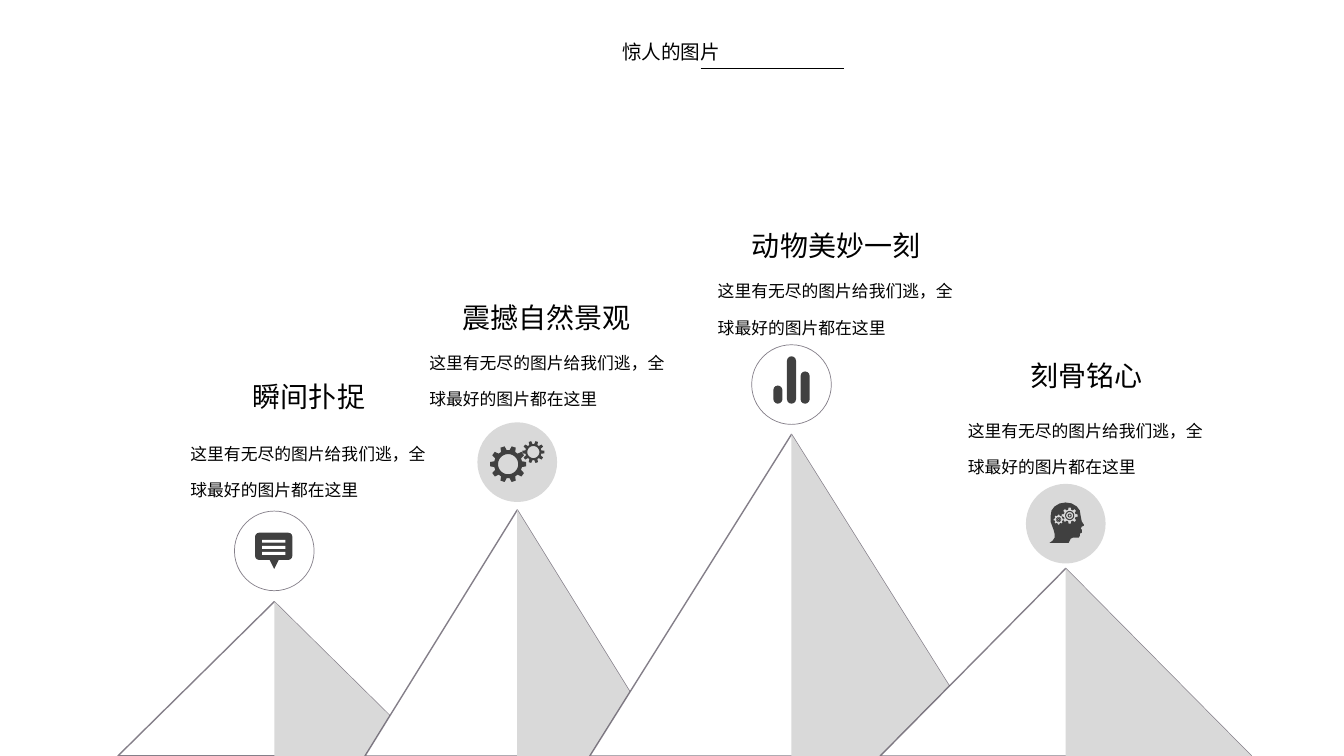
from collections import namedtuple
from math import cos, pi, sin

from lxml.etree import SubElement
from pptx import Presentation
from pptx.dml.color import RGBColor
from pptx.enum.shapes import MSO_CONNECTOR, MSO_SHAPE as Preset
from pptx.enum.text import MSO_ANCHOR, MSO_AUTO_SIZE, PP_ALIGN
from pptx.oxml.ns import qn
from pptx.util import Inches, Pt

WIDTH, HEIGHT = 13.33, 7.5
FONT = "Noto Sans"
COLORS = {"ink": "000000", "icon": "404040", "shade": "D9D9D9",
          "paper": "FFFFFF", "edge": "2F2637"}
EDGE_OPACITY = 59
DISC = 0.79
BODY = "这里有无尽的图片给我们逃，全球最好的图片都在这里"
BODY_SIZE = (2.55, 0.83)
HEADING_HEIGHT = 0.44

Mountain = namedtuple(
    "Mountain", "peak top half disc_top disc_fill icon heading heading_box body_at")


def color(name):
    return RGBColor.from_string(COLORS[name])


def paint(shape, fill, edge_width=None):
    shape.shadow.inherit = False
    shape.fill.solid()
    shape.fill.fore_color.rgb = color(fill)
    if edge_width is None:
        shape.line.fill.background()
        return
    shape.line.width = Pt(edge_width)
    shape.line.color.rgb = color("edge")
    edge_color = shape.line.fill._xPr.find(".//" + qn("a:srgbClr"))
    SubElement(edge_color, qn("a:alpha"), val=str(EDGE_OPACITY * 1000))


def add_preset(slide, preset, box, fill, edge_width=None, rounding=None):
    shape = slide.shapes.add_shape(preset, *map(Inches, box))
    if rounding is not None:
        shape.adjustments[0] = rounding
    paint(shape, fill, edge_width)


def add_outline(slide, contours, fill, edge_width=None):
    """Closed polygons in one shape; a nested polygon cuts a hole."""
    outlines = [[(Inches(x), Inches(y)) for x, y in points] for points in contours]
    builder = slide.shapes.build_freeform(*outlines[0][0])
    for points in outlines:
        if points is not outlines[0]:
            builder.move_to(*points[0])
        builder.add_line_segments(points[1:], close=True)
    paint(builder.convert_to_shape(), fill, edge_width)


def polar(x, y, radius, angle):
    return x + radius * cos(angle), y + radius * sin(angle)


def circle(x, y, radius, steps=40):
    return [polar(x, y, radius, 2 * pi * step / steps) for step in range(steps)]


def gear(x, y, tip, root, teeth):
    pitch = 2 * pi / teeth
    profile = [(root, -0.33), (tip, -0.19), (tip, 0.19), (root, 0.33)]
    return [polar(x, y, radius, (tooth + share) * pitch)
            for tooth in range(teeth) for radius, share in profile]


def bubble_icon(slide, x, y):
    add_outline(slide, [[(x - 0.05, y + 0.08), (x + 0.05, y + 0.08), (x, y + 0.18)]], "icon")
    add_preset(slide, Preset.ROUNDED_RECTANGLE, (x - 0.19, y - 0.18, 0.37, 0.27),
               "icon", rounding=0.15)
    for row in range(3):
        add_preset(slide, Preset.RECTANGLE, (x - 0.12, y - 0.11 + row * 0.06, 0.23, 0.03),
                   "paper")


def gears_icon(slide, x, y):
    for dx, dy, tip, root, hole in [(-0.09, 0.02, 0.18, 0.14, 0.1),
                                    (0.16, -0.1, 0.11, 0.08, 0.06)]:
        center = x + dx, y + dy
        add_outline(slide, [gear(*center, tip, root, 10), circle(*center, hole)], "icon")


def bars_icon(slide, x, y):
    for column, height in enumerate([0.18, 0.47, 0.32]):
        left = x - 0.18 + column * 0.135
        add_preset(slide, Preset.ROUNDED_RECTANGLE, (left, y + 0.19 - height, 0.09, height),
                   "icon", rounding=0.5)


def head_icon(slide, x, y):
    profile = [(0.16, -0.02), (0.15, -0.07), (0.14, -0.13), (0.11, -0.17), (0.06, -0.2),
               (0, -0.21), (-0.06, -0.2), (-0.11, -0.17), (-0.14, -0.13), (-0.15, -0.07),
               (-0.15, -0.02), (-0.12, 0.06), (-0.11, 0.1), (-0.11, 0.14), (-0.13, 0.17),
               (-0.16, 0.19), (0.03, 0.19), (0.05, 0.15), (0.07, 0.14), (0.13, 0.14),
               (0.14, 0.12), (0.14, 0.1), (0.16, 0.09), (0.16, 0.06), (0.15, 0.05),
               (0.16, 0.03), (0.18, 0.02), (0.18, 0.01)]
    contours = [[(x + dx, y + dy) for dx, dy in profile]]
    for dx, dy, tip, root, rings in [(-0.07, -0.04, 0.05, 0.04, (0.025, 0.02, 0.015, 0.005)),
                                     (0.04, -0.08, 0.08, 0.06, (0.045, 0.035, 0.02, 0.01))]:
        center = x + dx, y + dy
        contours.append(gear(*center, tip, root, 8))
        contours += [circle(*center, radius) for radius in rings]
    add_outline(slide, contours, "icon")


def set_text(shape, text, size, wrap, line_spacing=None):
    frame = shape.text_frame
    frame.text = text
    paragraph = frame.paragraphs[0]
    run = paragraph.runs[0]
    formats = [(frame, {"word_wrap": wrap, "auto_size": MSO_AUTO_SIZE.NONE,
                        "vertical_anchor": MSO_ANCHOR.TOP}),
               (paragraph, {"alignment": PP_ALIGN.LEFT, "line_spacing": line_spacing}),
               (run.font, {"size": Pt(size), "name": FONT})]
    for target, values in formats:
        for name, value in values.items():
            setattr(target, name, value)
    run.font.color.rgb = color("ink")
    SubElement(run.font._element, qn("a:ea"), typeface=FONT)


def add_title(slide, left, top, width, height):
    title = slide.shapes.title
    for name, value in zip(("left", "top", "width", "height"), (left, top, width, height)):
        setattr(title, name, Inches(value))
    set_text(title, "惊人的图片", 14, wrap=False)
    start, level = left + 0.88, top + 0.33
    rule = slide.shapes.add_connector(
        MSO_CONNECTOR.STRAIGHT, *map(Inches, (start, level, start + 1.42, level)))
    rule.line.width = Pt(0.5)
    rule.line.color.rgb = color("ink")
    SubElement(rule._element.spPr, qn("a:effectLst"))


def add_slopes(slide, mountain):
    summit, foot = (mountain.peak, mountain.top), (mountain.peak, HEIGHT)
    right = mountain.peak + mountain.half, HEIGHT
    left = mountain.peak - mountain.half, HEIGHT
    add_outline(slide, [[summit, right, left]], "paper", edge_width=1)
    add_outline(slide, [[summit, right, foot]], "shade")


def add_badge(slide, mountain):
    edge_width = 0.5 if mountain.disc_fill == "paper" else None
    add_preset(slide, Preset.OVAL, (mountain.peak - DISC / 2, mountain.disc_top, DISC, DISC),
               mountain.disc_fill, edge_width)
    mountain.icon(slide, mountain.peak, mountain.disc_top + DISC / 2)


def add_caption(slide, mountain):
    heading_box = (*mountain.heading_box, HEADING_HEIGHT)
    heading = slide.shapes.add_textbox(*map(Inches, heading_box))
    set_text(heading, mountain.heading, 20, wrap=False)
    body = slide.shapes.add_textbox(*map(Inches, mountain.body_at + BODY_SIZE))
    set_text(body, BODY, 12, wrap=True, line_spacing=Pt(26))


MOUNTAINS = [
    Mountain(2.72, 5.97, 1.55, 5.07, "paper", bubble_icon,
             "瞬间扑捉", (2.41, 3.72, 1.32), (1.79, 4.19)),
    Mountain(5.13, 5.06, 1.51, 4.19, "shade", gears_icon,
             "震撼自然景观", (4.49, 2.93, 1.88), (4.16, 3.29)),
    Mountain(7.85, 4.31, 2.0, 3.42, "paper", bars_icon,
             "动物美妙一刻", (7.36, 2.22, 1.88), (7.02, 2.58)),
    Mountain(10.57, 5.64, 1.84, 4.8, "shade", head_icon,
             "刻骨铭心", (10.12, 3.51, 1.32), (9.5, 3.96)),
]


def main():
    presentation = Presentation()
    presentation.slide_width, presentation.slide_height = Inches(WIDTH), Inches(HEIGHT)
    slide = presentation.slides.add_slide(presentation.slide_layouts[5])
    add_title(slide, 6.07, 0.35, 1.18, 0.34)
    for add_part in (add_slopes, add_badge, add_caption):
        for mountain in MOUNTAINS:
            add_part(slide, mountain)
    presentation.save("out.pptx")


if __name__ == "__main__":
    main()
